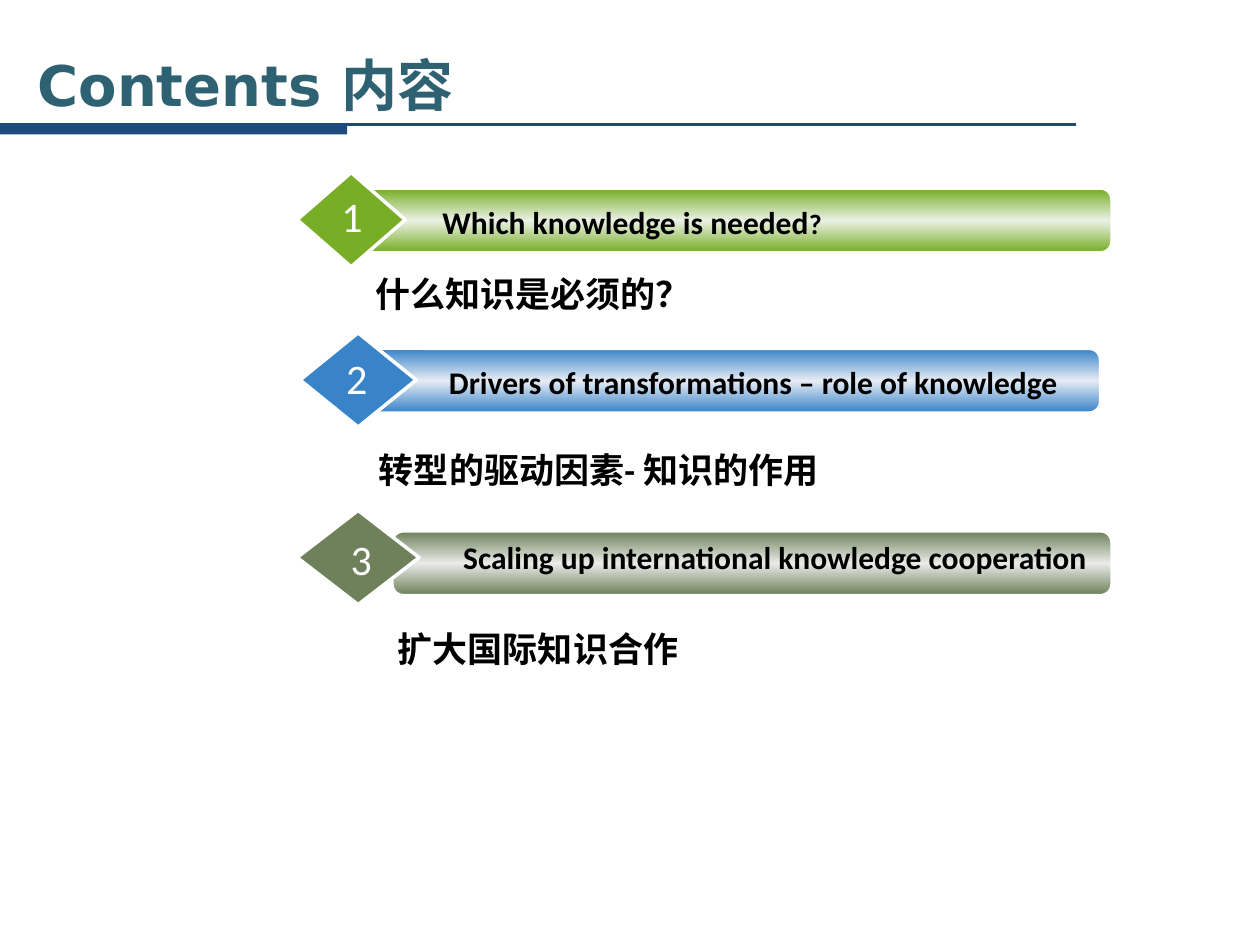
"""Build the contents slide with three numbered topics in English and Chinese."""
from copy import deepcopy

from lxml.etree import SubElement
from pptx import Presentation
from pptx.dml.color import RGBColor
from pptx.enum.shapes import MSO_CONNECTOR, MSO_SHAPE
from pptx.enum.text import MSO_ANCHOR, PP_ALIGN
from pptx.oxml.ns import qn
from pptx.util import Cm, Pt

NAVY, TEAL, WHITE, BLACK = "1F497D", "2E6272", "FFFFFF", "000000"
BAR_HEIGHT, DIAMOND_HEIGHT = 1.27, 1.9
TITLE = "Contents 内容"
TOPICS = [
    dict(number="1", english=[("Which knowledge is needed", 18), ("?", 16)],
         chinese="什么知识是必须的？", color="77AE26", glow="EBF1E6",
         bar=(7.34, 3.81, 15.06), diamond=(5.99, 3.48, 2.18),
         label=(7.98, 3.96, 9.53), digit=(6.6, 3.71, 0.99), caption=(7.32, 5.36)),
    dict(number="2", english=[("Drivers of transformations – role of knowledge", 18)],
         chinese="转型的驱动因素- 知识的作用", color="3984C9", glow="E7ECF5",
         bar=(7.34, 7.04, 14.83), diamond=(6.05, 6.71, 2.34),
         label=(8.13, 7.19, 14.12), digit=(6.58, 6.98, 1.22), caption=(7.39, 8.92)),
    dict(number="3", english=[("Scaling up international knowledge cooperation", 18)],
         chinese="扩大国际知识合作", color="6E815B", glow="EAEBE8",
         bar=(7.92, 10.72, 14.48), diamond=(5.99, 10.29, 2.46),
         label=(7.98, 10.72, 15.29), digit=(6.65, 10.64, 1.27), caption=(7.77, 12.52)),
]


def rgb(value):
    """Turn a hex string into a colour."""
    return RGBColor.from_string(value)


def add_box(page, kind, left, top, width, height, fill=None, line=None, weight=1):
    """Add a flat preset shape."""
    shape = page.shapes.add_shape(kind, Cm(left), Cm(top), Cm(width), Cm(height))
    shape.shadow.inherit = False
    if fill:
        shape.fill.solid()
        shape.fill.fore_color.rgb = rgb(fill)
    if line:
        shape.line.color.rgb = rgb(line)
        shape.line.width = Pt(weight)
    else:
        shape.line.fill.background()
    return shape


def add_gradient(shape, edge, middle):
    """Fill a shape with a vertical gradient that is lighter in the middle."""
    shape.fill.gradient()
    shape.fill.gradient_angle = 90
    stop_list = shape._element.spPr.find(".//" + qn("a:gsLst"))
    stop_list.insert(1, deepcopy(stop_list[0]))
    for stop, color, position in zip(shape.fill.gradient_stops, (edge, middle, edge), (0, 0.5, 1)):
        stop.color.rgb = rgb(color)
        stop.position = position


def add_text(page, spans, left, top, width, height, color=BLACK, font="Calibri",
             bold=True, align=PP_ALIGN.LEFT, anchor=MSO_ANCHOR.TOP, wrap=True):
    """Add a text box with one paragraph made of (text, size) spans."""
    box = page.shapes.add_textbox(Cm(left), Cm(top), Cm(width), Cm(height))
    frame = box.text_frame
    frame.word_wrap = wrap
    frame.vertical_anchor = anchor
    para = frame.paragraphs[0]
    para.alignment = align
    for text, size in spans:
        span = para.add_run()
        span.text = text
        span.font.name = font
        span.font.size = Pt(size)
        span.font.bold = bold
        span.font.color.rgb = rgb(color)


def add_header(page):
    """Add the title and the rule below it."""
    rule = page.shapes.add_connector(MSO_CONNECTOR.STRAIGHT, Cm(0), Cm(2.51), Cm(21.69), Cm(2.51))
    rule.line.color.rgb = rgb(NAVY)
    rule.line.width = Pt(1.5)
    SubElement(rule._element.spPr, qn("a:effectLst"))
    add_box(page, MSO_SHAPE.RECTANGLE, 0, 2.51, 7, 0.2, NAVY)
    add_text(page, [(TITLE, 32)], 0.51, 0.91, 21.39, 1.57, TEAL, "DejaVu Sans",
             anchor=MSO_ANCHOR.MIDDLE)


def add_topic(page, topic):
    """Add one numbered bar with its Chinese caption."""
    bar = add_box(page, MSO_SHAPE.ROUNDED_RECTANGLE, *topic["bar"], BAR_HEIGHT, line=WHITE)
    add_gradient(bar, topic["color"], topic["glow"])
    add_box(page, MSO_SHAPE.DIAMOND, *topic["diamond"], DIAMOND_HEIGHT,
            topic["color"], WHITE, 2)
    add_text(page, topic["english"], *topic["label"], 1.02, align=PP_ALIGN.CENTER)
    add_text(page, [(topic["number"], 24)], *topic["digit"], 1.27, WHITE,
             bold=False, align=PP_ALIGN.CENTER, wrap=False)
    add_text(page, [(topic["chinese"], 20)], *topic["caption"], 12.37, 1.12)


def main():
    """Create and save the deck."""
    deck = Presentation()
    deck.slide_width, deck.slide_height = Cm(25.4), Cm(19.05)
    page = deck.slides.add_slide(deck.slide_layouts[6])
    add_header(page)
    for topic in TOPICS:
        add_topic(page, topic)
    deck.save("out.pptx")


if __name__ == "__main__":
    main()
